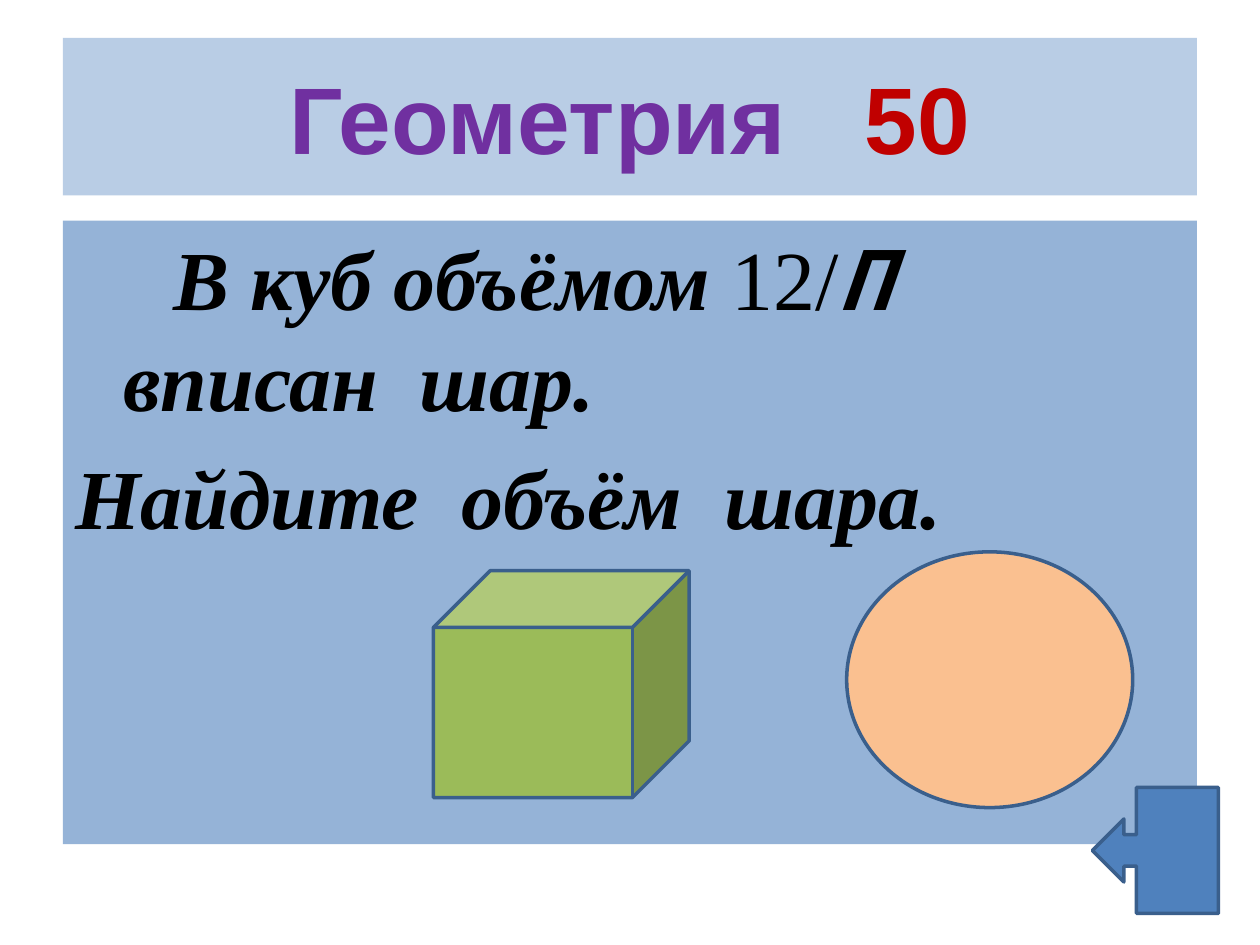
from pptx import Presentation
from pptx.dml.color import RGBColor
from pptx.enum import shapes, text
from pptx.util import Inches, Pt

BLACK = RGBColor(0x00, 0x00, 0x00)
PURPLE = RGBColor(0x70, 0x30, 0xA0)
RED = RGBColor(0xC0, 0x00, 0x00)
PALE_BLUE = RGBColor(0xB9, 0xCD, 0xE5)
MID_BLUE = RGBColor(0x95, 0xB3, 0xD7)
BLUE = RGBColor(0x4F, 0x81, 0xBD)
OUTLINE = RGBColor(0x3A, 0x5F, 0x8C)
GREEN = RGBColor(0x9B, 0xBB, 0x59)
PEACH = RGBColor(0xFA, 0xC0, 0x90)
SERIF = "Times New Roman"


def add_figure(slide, kind, box, fill, outline=None):
    """Add a filled preset shape, outlined if a colour is given."""
    figure = slide.shapes.add_shape(kind, *map(Inches, box))
    figure.shadow.inherit = False
    figure.fill.solid()
    figure.fill.fore_color.rgb = fill
    if outline is None:
        figure.line.fill.background()
    else:
        figure.line.color.rgb = outline
        figure.line.width = Pt(2)
    return figure


def add_panel(slide, box, fill, anchor):
    """Add a text panel and return its text frame."""
    frame = add_figure(slide, shapes.MSO_SHAPE.RECTANGLE, box, fill).text_frame
    frame.word_wrap = True
    frame.vertical_anchor = anchor
    return frame


def add_words(paragraph, words, size, color, font=SERIF, bold=True, italic=True):
    """Append one formatted run to a paragraph."""
    run = paragraph.add_run()
    run.text = words
    run.font.size = Pt(size)
    run.font.name = font
    run.font.bold = bold
    run.font.italic = italic
    run.font.color.rgb = color
    return run


def add_gap(paragraph, size, extra, font=SERIF):
    """Append a single space widened by extra points."""
    gap = add_words(paragraph, " ", size, BLACK, font)
    gap.font._element.set("spc", str(extra * 100))


def add_spaced_words(paragraph, words):
    """Append problem words with wide gaps between them."""
    for position, word in enumerate(words):
        if position:
            add_gap(paragraph, 48, 12)
        add_words(paragraph, word, 48, BLACK)


def set_indent(paragraph, margin, first_line):
    """Left-align a paragraph and set its indents in inches."""
    paragraph.alignment = text.PP_ALIGN.LEFT
    properties = paragraph._p.get_or_add_pPr()
    properties.set("marL", str(Inches(margin)))
    properties.set("indent", str(Inches(first_line)))


def add_title(slide):
    """Add the topic and its score."""
    frame = add_panel(slide, (0.5, 0.3, 9, 1.25), PALE_BLUE, text.MSO_ANCHOR.MIDDLE)
    heading = frame.paragraphs[0]
    heading.alignment = text.PP_ALIGN.CENTER
    add_words(heading, "Геометрия", 54, PURPLE, "Arial", italic=False)
    add_gap(heading, 54, 30, "Arial")
    add_words(heading, "50", 54, RED, "Arial", italic=False)


def add_problem(slide):
    """Add the wording of the problem."""
    frame = add_panel(slide, (0.5, 1.75, 9, 4.95), MID_BLUE, text.MSO_ANCHOR.TOP)
    condition = frame.paragraphs[0]
    set_indent(condition, 0.38, 0.4)
    add_words(condition, "В куб объёмом ", 48, BLACK)
    add_words(condition, "12/", 48, BLACK, bold=False, italic=False)
    add_words(condition, "П", 48, BLACK, "Noto Sans Mono")
    condition.add_line_break()
    add_spaced_words(condition, ("вписан", "шар."))

    question = frame.add_paragraph()
    set_indent(question, 0.38, -0.38)
    question.space_before = Pt(9.6)
    add_spaced_words(question, ("Найдите", "объём", "шара."))


def main():
    """Build the geometry question slide."""
    deck = Presentation()
    deck.slide_width, deck.slide_height = Inches(10), Inches(7.5)
    slide = deck.slides.add_slide(deck.slide_layouts[6])
    add_problem(slide)
    add_title(slide)
    preset = shapes.MSO_SHAPE
    add_figure(slide, preset.LEFT_ARROW_CALLOUT, (8.67, 6.25, 1, 1), BLUE, OUTLINE)
    add_figure(slide, preset.CUBE, (3.44, 4.53, 2.03, 1.8), GREEN, OUTLINE)
    add_figure(slide, preset.OVAL, (6.72, 4.38, 2.27, 2.03), PEACH, OUTLINE)
    deck.save("out.pptx")


if __name__ == "__main__":
    main()
